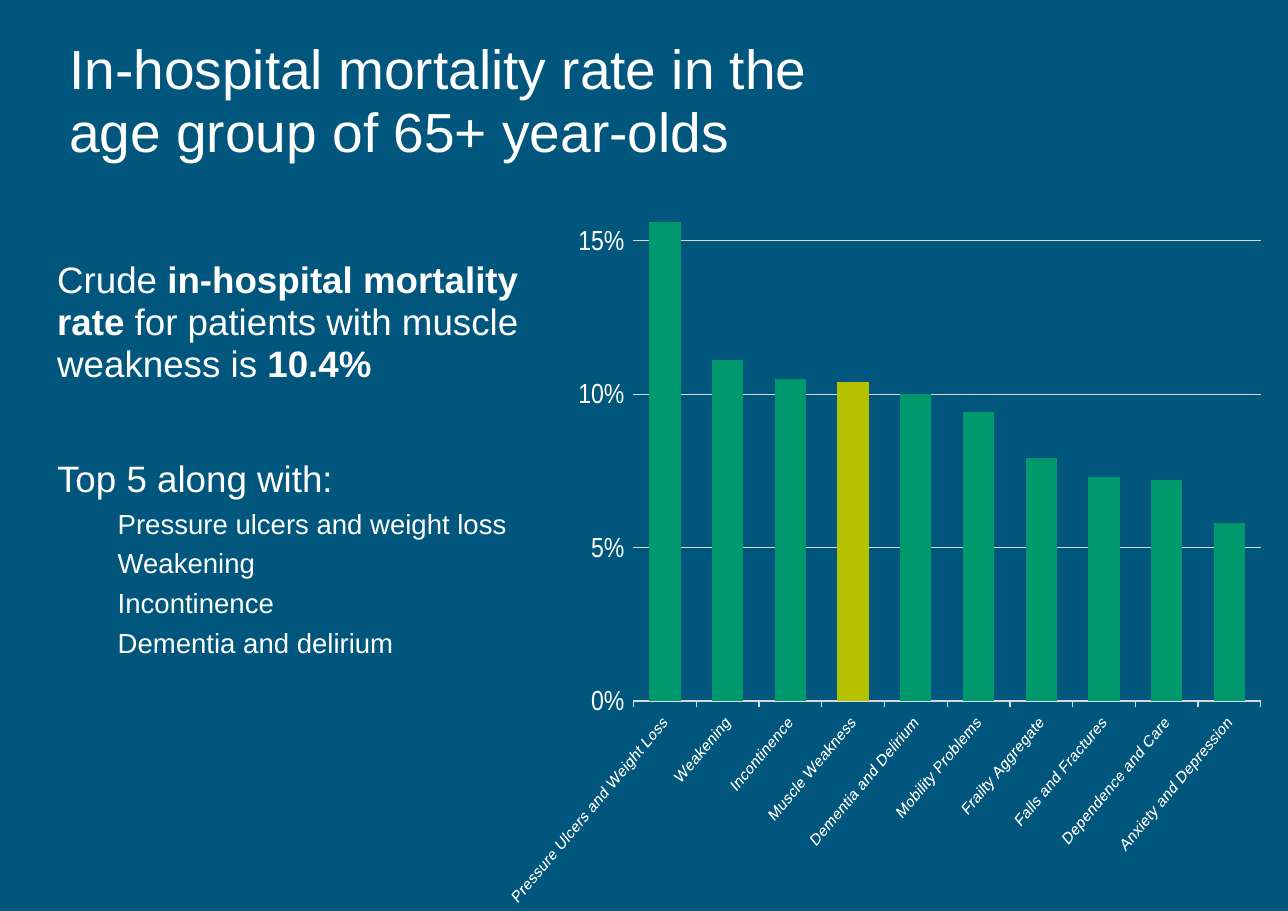
"""Build the slide on in-hospital mortality among patients aged 65 and over."""
from dataclasses import dataclass

from lxml import etree
from pptx import Presentation
from pptx.chart.data import CategoryChartData
from pptx.dml.color import RGBColor
from pptx.enum import chart as ch
from pptx.util import Inches, Pt


@dataclass(frozen=True)
class Theme:
    font: str = "Arial"
    back: RGBColor = RGBColor(0x00, 0x56, 0x7C)
    ink: RGBColor = RGBColor(0xFF, 0xFF, 0xFF)
    bar: RGBColor = RGBColor(0x00, 0x99, 0x6D)
    accent: RGBColor = RGBColor(0xB6, 0xC2, 0x00)
    rule: RGBColor = RGBColor(0xD9, 0xD9, 0xD9)
    title: Pt = Pt(36)
    body: Pt = Pt(24)
    item: Pt = Pt(18)
    label: Pt = Pt(11)


theme = Theme()


def style(font, size):
    font.name, font.size = theme.font, size
    font.color.rgb = theme.ink


def add_text(s, box, paragraphs):
    tf = s.shapes.add_textbox(*map(Inches, box)).text_frame
    tf.word_wrap = True
    for i, (runs, size, before, indent) in enumerate(paragraphs):
        p = tf.paragraphs[0] if i == 0 else tf.add_paragraph()
        p.line_spacing, p.space_before = 0.95, Pt(before)
        if indent:
            p.level = 1
            p._p.get_or_add_pPr().set("marL", str(Inches(indent)))
            p._p.get_or_add_pPr().set("indent", "0")
        style(p.font, size)
        for words, bold in runs:
            r = p.add_run()
            r.text = words
            if bold:
                r.font.bold = True


prs = Presentation()
prs.slide_width, prs.slide_height = Inches(11.69), Inches(8.27)
s = prs.slides.add_slide(prs.slide_layouts[6])
s.background.fill.solid()
s.background.fill.fore_color.rgb = theme.back

finding = [
    ("Crude ", False),
    ("in-hospital mortality rate ", True),
    ("for patients with muscle weakness is ", False),
    ("10.4%", True),
]
companions = ["Pressure ulcers and weight loss", "Weakening", "Incontinence", "Dementia and delirium"]
body = [(finding, theme.body, 0, 0), ([("Top 5 along with:", False)], theme.body, 48, 0)]
body += [([(name, False)], theme.item, 5.5, 0.55) for name in companions]
add_text(s, (0.42, 2.31, 4.69, 4.27), body)

rates = {
    "Pressure Ulcers and Weight Loss": 0.156,
    "Weakening": 0.111,
    "Incontinence": 0.105,
    "Muscle Weakness": 0.104,
    "Dementia and Delirium": 0.1,
    "Mobility Problems": 0.094,
    "Frailty Aggregate": 0.079,
    "Falls and Fractures": 0.073,
    "Dependence and Care": 0.072,
    "Anxiety and Depression": 0.058,
}
data = CategoryChartData(number_format="0%")
data.categories = list(rates)
data.add_series("Series 1", list(rates.values()))
box = map(Inches, (4.61, 1.5, 6.84, 6.9))
chart = s.shapes.add_chart(ch.XL_CHART_TYPE.COLUMN_CLUSTERED, *box, data).chart
chart.has_legend = chart.has_title = False
style(chart.font, theme.label)

plot = chart.plots[0]
plot.gap_width, plot.overlap, plot.vary_by_categories = 100, -24, False
series = plot.series[0]
series.invert_if_negative = False
highlight = series.points[list(rates).index("Muscle Weakness")]
for part, color in ((series, theme.bar), (highlight, theme.accent)):
    part.format.fill.solid()
    part.format.fill.fore_color.rgb = color

cat = chart.category_axis
cat.major_tick_mark = ch.XL_TICK_MARK.OUTSIDE
cat.format.line.color.rgb, cat.format.line.width = theme.rule, Pt(1)
style(cat.tick_labels.font, theme.label)
cat._element.txPr.bodyPr.set("rot", str(-45 * 60000))

val = chart.value_axis
val.minimum_scale, val.maximum_scale, val.major_unit = 0, 0.156, 0.05
val.major_tick_mark = ch.XL_TICK_MARK.OUTSIDE
val.format.line.fill.background()
val.has_major_gridlines = True
grid = val.major_gridlines.format.line
grid.color.rgb, grid.width = theme.rule, Pt(0.75)
val.tick_labels.number_format = "0%"
val.tick_labels.number_format_is_linked = False
style(val.tick_labels.font, theme.item)

area = chart._chartSpace.chart.plotArea
ns = "{http://schemas.openxmlformats.org/drawingml/2006/chart}"
for old in area.findall(ns + "layout"):
    area.remove(old)
layout = etree.Element(ns + "layout")
manual = etree.SubElement(layout, ns + "manualLayout")
settings = {"layoutTarget": "inner", "xMode": "edge", "yMode": "edge",
            "x": 0.2, "y": 0.075, "w": 0.995, "h": 0.63}
for name, value in settings.items():
    etree.SubElement(manual, ns + name).set("val", str(value))
area.insert(0, layout)

heading = "In-hospital mortality rate in the age group of 65+ year-olds"
add_text(s, (0.53, 0.31, 7.8, 1.06), [([(heading, False)], theme.title, 0, 0)])

prs.save("out.pptx")
